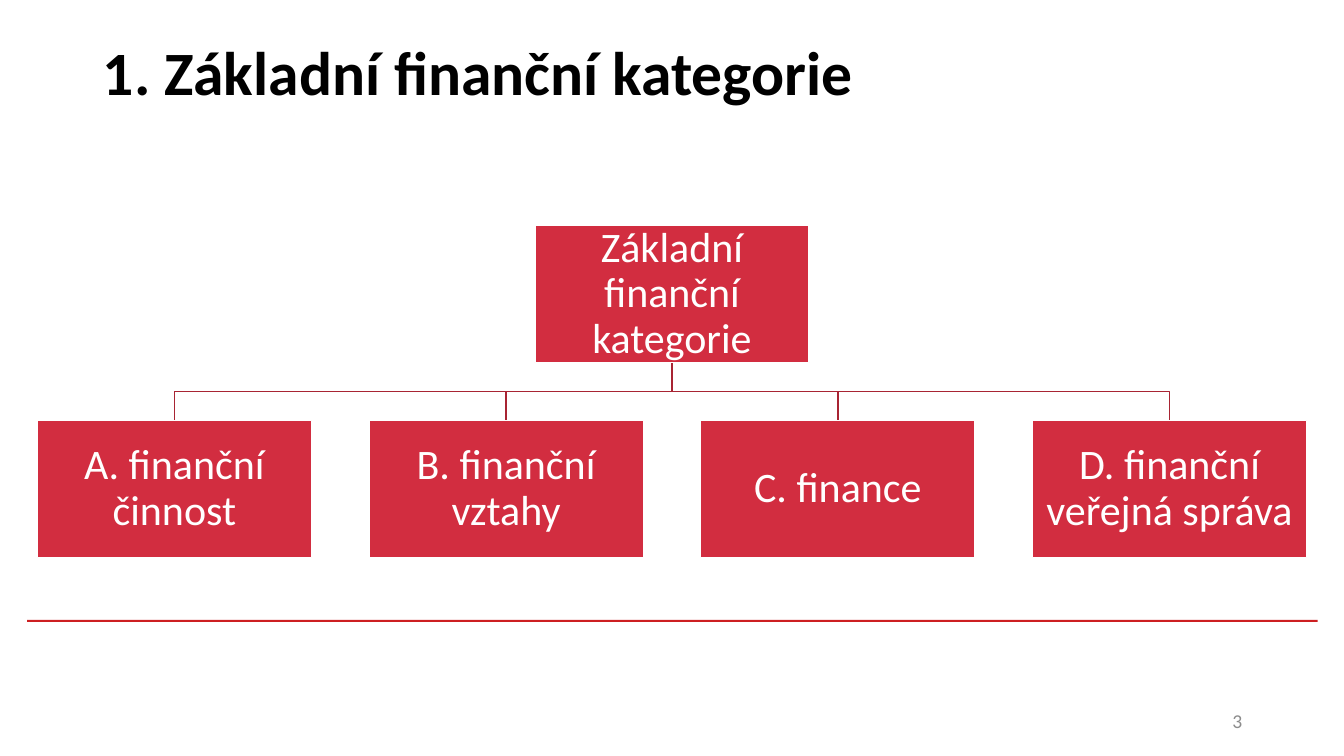
import dataclasses

import pptx
import pptx.dml.color
import pptx.enum.shapes
import pptx.enum.text
import pptx.presentation
import pptx.shapes.autoshape
import pptx.slide
import pptx.text.text
import pptx.util

Inches = pptx.util.Inches
Pt = pptx.util.Pt
RGBColor = pptx.dml.color.RGBColor
Alignment = pptx.enum.text.PP_ALIGN
Anchor = pptx.enum.text.MSO_ANCHOR
RECTANGLE = pptx.enum.shapes.MSO_SHAPE.RECTANGLE

BLACK = RGBColor(0x00, 0x00, 0x00)
WHITE = RGBColor(0xFF, 0xFF, 0xFF)
GRAY = RGBColor(0x8C, 0x8C, 0x8C)
RULE_RED = RGBColor(0xCD, 0x1F, 0x21)
BOX_RED = RGBColor(0xD2, 0x2D, 0x40)
BRANCH_RED = RGBColor(0xA8, 0x24, 0x33)

FONT = "Calibri"
BOX_WIDTH = 2.72
BOX_HEIGHT = 1.36
ROOT_TOP = 2.24
CHILD_TOP = 4.17
FIRST_LEFT = 0.37
CHILD_STEP = 3.29


@dataclasses.dataclass(frozen=True)
class Category:
    text: str
    left: float
    top: float

    @property
    def center(self) -> float:
        return self.left + BOX_WIDTH / 2

    @property
    def bottom(self) -> float:
        return self.top + BOX_HEIGHT


CHILD_TEXTS = (
    "A. finanční činnost",
    "B. finanční vztahy",
    "C. finance",
    "D. finanční veřejná správa",
)
ROOT = Category("Základní finanční kategorie", FIRST_LEFT + 1.5 * CHILD_STEP, ROOT_TOP)
CHILDREN = [
    Category(text, FIRST_LEFT + index * CHILD_STEP, CHILD_TOP)
    for index, text in enumerate(CHILD_TEXTS)
]


def write_text(
    text_frame: pptx.text.text.TextFrame,
    text: str,
    size: float,
    color: RGBColor,
    alignment: Alignment,
    bold: bool = False,
    line_spacing: float = 0.9,
) -> None:
    text_frame.word_wrap = True
    text_frame.vertical_anchor = Anchor.MIDDLE
    paragraph = text_frame.paragraphs[0]
    paragraph.alignment = alignment
    paragraph.line_spacing = line_spacing
    run = paragraph.add_run()
    run.text = text
    run.font.name = FONT
    run.font.size = Pt(size)
    run.font.bold = bold
    run.font.color.rgb = color


def add_rectangle(
    slide: pptx.slide.Slide, left: float, top: float, width: float, height: float, color: RGBColor
) -> pptx.shapes.autoshape.Shape:
    shape = slide.shapes.add_shape(
        RECTANGLE, Inches(left), Inches(top), Inches(width), Inches(height)
    )
    shape.shadow.inherit = False
    shape.fill.solid()
    shape.fill.fore_color.rgb = color
    shape.line.fill.background()
    return shape


def add_title(slide: pptx.slide.Slide) -> None:
    title = slide.shapes.title
    title.left, title.top = Inches(0.92), Inches(0.02)
    title.width, title.height = Inches(11.5), Inches(1.45)
    write_text(
        title.text_frame, "1. Základní finanční kategorie", 44, BLACK, Alignment.LEFT, bold=True
    )


def add_slide_number(slide: pptx.slide.Slide) -> None:
    text_box = slide.shapes.add_textbox(Inches(9.42), Inches(6.95), Inches(3), Inches(0.4))
    write_text(text_box.text_frame, "3", 14, GRAY, Alignment.RIGHT, line_spacing=1.0)


def add_branch(slide: pptx.slide.Slide, parent: Category, child: Category) -> None:
    middle = (parent.bottom + child.top) / 2
    builder = slide.shapes.build_freeform(Inches(parent.center), Inches(parent.bottom))
    corners = (
        (parent.center, middle),
        (child.center, middle),
        (child.center, child.top),
    )
    builder.add_line_segments([(Inches(x), Inches(y)) for x, y in corners], close=False)
    branch = builder.convert_to_shape()
    branch.shadow.inherit = False
    branch.fill.background()
    branch.line.color.rgb = BRANCH_RED
    branch.line.width = Pt(1)


def add_category(slide: pptx.slide.Slide, category: Category) -> None:
    box = add_rectangle(slide, category.left, category.top, BOX_WIDTH, BOX_HEIGHT, BOX_RED)
    box.line.color.rgb = WHITE
    box.line.width = Pt(1)
    text_frame = box.text_frame
    text_frame.margin_left = text_frame.margin_right = Inches(0.02)
    text_frame.margin_top = text_frame.margin_bottom = Inches(0.02)
    write_text(text_frame, category.text, 30, WHITE, Alignment.CENTER)


def main() -> None:
    presentation = pptx.Presentation()
    presentation.slide_width = Inches(13.33)
    presentation.slide_height = Inches(7.5)
    slide = presentation.slides.add_slide(presentation.slide_layouts.get_by_name("Title Only"))
    add_rectangle(slide, 0.27, 6.15, 12.8, 0.02, RULE_RED)
    add_title(slide)
    add_slide_number(slide)
    for child in CHILDREN:
        add_branch(slide, ROOT, child)
    for category in (ROOT, *CHILDREN):
        add_category(slide, category)
    presentation.save("out.pptx")


if __name__ == "__main__":
    main()
